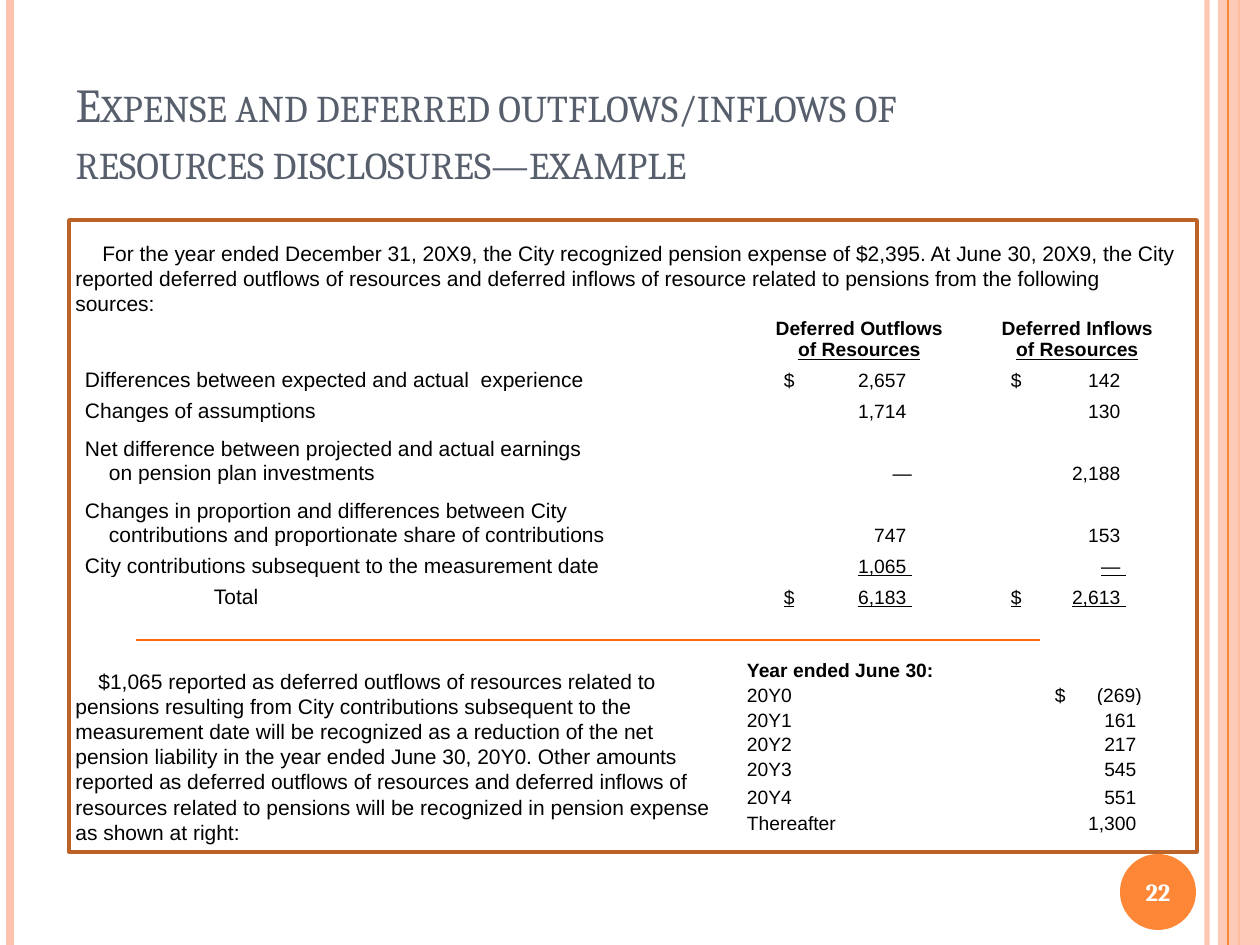
from lxml.etree import SubElement
from pptx import Presentation
from pptx.dml.color import RGBColor
from pptx.enum.shapes import MSO_CONNECTOR as CONNECTOR, MSO_SHAPE as SHAPE
from pptx.enum.text import MSO_ANCHOR as ANCHOR, MSO_AUTO_SIZE as AUTO_SIZE, PP_ALIGN as ALIGN
from pptx.oxml.ns import qn
from pptx.util import Emu, Pt

WIDTH, HEIGHT = 1260, 945
PALE, ORANGE, BLACK = "FEC3AE", "FE8637", "000000"


def px(length):
    return Emu(round(length * 914400 / 126))


def color(hex_string):
    return RGBColor.from_string(hex_string)


def format_runs(paragraph, size, bold=False, underline=False, font="Arial", ink=BLACK):
    for run in paragraph.runs:
        run.font.name, run.font.size = font, Pt(size)
        run.font.bold, run.font.underline = bold, underline
        run.font.color.rgb = color(ink)


def set_alpha(fill_parent, percent):
    for node in fill_parent.iter(qn("a:srgbClr")):
        SubElement(node, qn("a:alpha")).set("val", str(percent * 1000))


def add_line(slide, start, end, ink, weight):
    line = slide.shapes.add_connector(CONNECTOR.STRAIGHT, *map(px, start + end))
    line.line.color.rgb = color(ink)
    line.line.width = Pt(weight)
    SubElement(line._element.spPr, qn("a:effectLst"))
    return line


def add_plain_shape(slide, kind, box, fill=None, line=None, weight=1):
    shape = slide.shapes.add_shape(kind, *map(px, box))
    shape.shadow.inherit = False
    if fill:
        shape.fill.solid()
        shape.fill.fore_color.rgb = color(fill)
    else:
        shape.fill.background()
    if line:
        shape.line.color.rgb = color(line)
        shape.line.width = Pt(weight)
    else:
        shape.line.fill.background()
    return shape


def add_side_stripes(slide):
    stripe = add_line(slide, (1207, 0), (1207, HEIGHT), PALE, 3)
    set_alpha(stripe._element.spPr, 93)
    add_line(slide, (10, 0), (10, HEIGHT), PALE, 4.5)
    add_line(slide, (1239, 0), (1239, HEIGHT), ORANGE, 1.5)
    band = add_plain_shape(slide, SHAPE.RECTANGLE, (1218, 0, 42, HEIGHT), PALE)
    set_alpha(band._element.spPr, 87)
    add_line(slide, (1228, 0), (1228, HEIGHT), ORANGE, 0.75)


def add_page_badge(slide, box, number):
    badge = add_plain_shape(slide, SHAPE.OVAL, box, ORANGE)
    frame = badge.text_frame
    frame.margin_left = frame.margin_right = 0
    frame.vertical_anchor = ANCHOR.MIDDLE
    frame.text = number
    paragraph = frame.paragraphs[0]
    paragraph.alignment = ALIGN.CENTER
    format_runs(paragraph, 14, bold=True, font="Cambria", ink="FFFFFF")


def fill_title(slide, box, text):
    title = slide.shapes.title
    title.left, title.top, title.width, title.height = map(px, box)
    frame = title.text_frame
    frame.text = text
    frame.auto_size = AUTO_SIZE.NONE
    frame.vertical_anchor = ANCHOR.BOTTOM
    paragraph = frame.paragraphs[0]
    paragraph.alignment = ALIGN.LEFT
    format_runs(paragraph, 27, font="Cambria", ink="575F6D")
    for run in paragraph.runs:
        run.font._element.set("cap", "small")


def add_body_text(slide, box, text, indent):
    frame = slide.shapes.add_textbox(*map(px, box)).text_frame
    frame.word_wrap = True
    frame.text = text
    paragraph = frame.paragraphs[0]
    paragraph.line_spacing = Pt(14.4)
    paragraph._p.get_or_add_pPr().set("indent", str(px(indent)))
    format_runs(paragraph, 12)


def add_plain_table(slide, left, top, columns, rows):
    box = (left, top, sum(columns), sum(rows))
    table = slide.shapes.add_table(len(rows), len(columns), *map(px, box)).table
    table.first_row = table.horz_banding = False
    for column, width in zip(table.columns, columns):
        column.width = px(width)
    for row, height in zip(table.rows, rows):
        row.height = px(height)
    for cell in table.iter_cells():
        cell.fill.background()
        cell.vertical_anchor = ANCHOR.BOTTOM
        cell.margin_left = cell.margin_right = cell.margin_top = px(1)
        cell.margin_bottom = 0
        format_empty = cell.text_frame.paragraphs[0]
        format_empty.font.size = Pt(11)
    return table


def set_label(cell, text, size, bold=False, hanging=0):
    cell.text_frame.text = text
    paragraph = cell.text_frame.paragraphs[0]
    if hanging:
        properties = paragraph._p.get_or_add_pPr()
        properties.set("marL", str(px(hanging)))
        properties.set("indent", str(-px(hanging)))
    format_runs(paragraph, size, bold)


def set_amount(cell, sign, amount, margin, width, underline=False):
    """Currency sign at the margin, amount on a right tab stop."""
    cell.margin_left = px(margin)
    cell.text_frame.text = f"{sign}\t{amount}"
    paragraph = cell.text_frame.paragraphs[0]
    tabs = SubElement(paragraph._p.get_or_add_pPr(), qn("a:tabLst"))
    tab = SubElement(tabs, qn("a:tab"))
    tab.set("pos", str(px(width)))
    tab.set("algn", "r")
    format_runs(paragraph, 11, underline=underline)


def add_deferred_table(slide, left, top):
    columns = [129, 129, 128, 128, 151, 9, 203, 29, 175]
    table = add_plain_table(slide, left, top, columns, [91, 31, 31, 62, 62, 31, 31])
    amount_columns = [(6, 26, 128), (8, 21, 115)]  # column, margin, tab width

    for column, kind in ((6, "Outflows"), (8, "Inflows")):
        frame = table.cell(0, column).text_frame
        frame.text = f"Deferred {kind}\nof Resources"
        for paragraph, underline in zip(frame.paragraphs, (False, True)):
            paragraph.alignment = ALIGN.CENTER
            format_runs(paragraph, 11, bold=True, underline=underline)

    entries = [
        ("Differences between expected and actual  experience", "$", "2,657 ", "142 ", False),
        ("Changes of assumptions", "", "1,714 ", "130 ", False),
        ("Net difference between projected and actual earnings\von pension plan investments",
         "", "—", "2,188 ", False),
        ("Changes in proportion and differences between City\v"
         "contributions and proportionate share of contributions", "", "747 ", "153 ", False),
        ("City contributions subsequent to the measurement date", "", "1,065 ", "— ", True),
        ("Total", "$", "6,183 ", "2,613 ", True),
    ]
    for row, (label, sign, outflow, inflow, underline) in enumerate(entries, 1):
        is_total = label == "Total"
        if not is_total:
            table.cell(row, 0).merge(table.cell(row, 4))
        set_label(table.cell(row, int(is_total)), label, 12, hanging=24 if "\v" in label else 0)
        for amount, (column, margin, width) in zip((outflow, inflow), amount_columns):
            set_amount(table.cell(row, column), sign, amount, margin, width, underline)
            if is_total:
                for run in table.cell(row, column).text_frame.paragraphs[0].runs:
                    run.font._element.set("u", "dbl")


def add_schedule_table(slide, left, top):
    table = add_plain_table(slide, left, top, [250, 25, 125], [52, 24, 25, 24, 25, 28, 26])
    table.cell(0, 0).merge(table.cell(0, 1))
    set_label(table.cell(0, 0), "Year ended June 30:", 11, bold=True)
    entries = [("20Y0", "$", "(269)"), ("20Y1", "", "161 "), ("20Y2", "", "217 "),
               ("20Y3", "", "545 "), ("20Y4", "", "551 "), ("Thereafter", "", "1,300 ")]
    for row, (year, sign, amount) in enumerate(entries, 1):
        set_label(table.cell(row, 0), year, 11)
        set_amount(table.cell(row, 2), sign, amount, 34, 87)


def main():
    presentation = Presentation()
    presentation.slide_width, presentation.slide_height = px(WIDTH), px(HEIGHT)
    slide = presentation.slides.add_slide(presentation.slide_layouts[5])

    # Page furniture and title
    add_side_stripes(slide)
    add_page_badge(slide, (1120, 854, 76, 76), "22")
    fill_title(slide, (63, 38, 1029, 157),
               "Expense and deferred outflows/inflows of resources disclosures—example")

    # Deferred outflows and inflows
    add_deferred_table(slide, 84, 270)
    add_body_text(slide, (63, 234, 1134, 88),
                  "For the year ended December 31, 20X9, the City recognized pension expense of "
                  "$2,395. At June 30, 20X9, the City reported deferred outflows of resources and "
                  "deferred inflows of resource related to pensions from the following sources:", 27)
    add_plain_shape(slide, SHAPE.RECTANGLE, (69, 220, 1128, 632), line="BC6329", weight=2)

    # Recognition in later years
    add_schedule_table(slide, 746, 630)
    add_body_text(slide, (63, 662, 662, 190),
                  "$1,065 reported as deferred outflows of resources related to pensions resulting "
                  "from City contributions subsequent to the measurement date will be recognized as "
                  "a reduction of the net pension liability in the year ended June 30, 20Y0. Other "
                  "amounts reported as deferred outflows of resources and deferred inflows of "
                  "resources related to pensions will be recognized in pension expense as shown at "
                  "right:", 23)
    add_line(slide, (136, 640), (1040, 640), "FF6B0A", 1)
    presentation.save("out.pptx")


if __name__ == "__main__":
    main()
